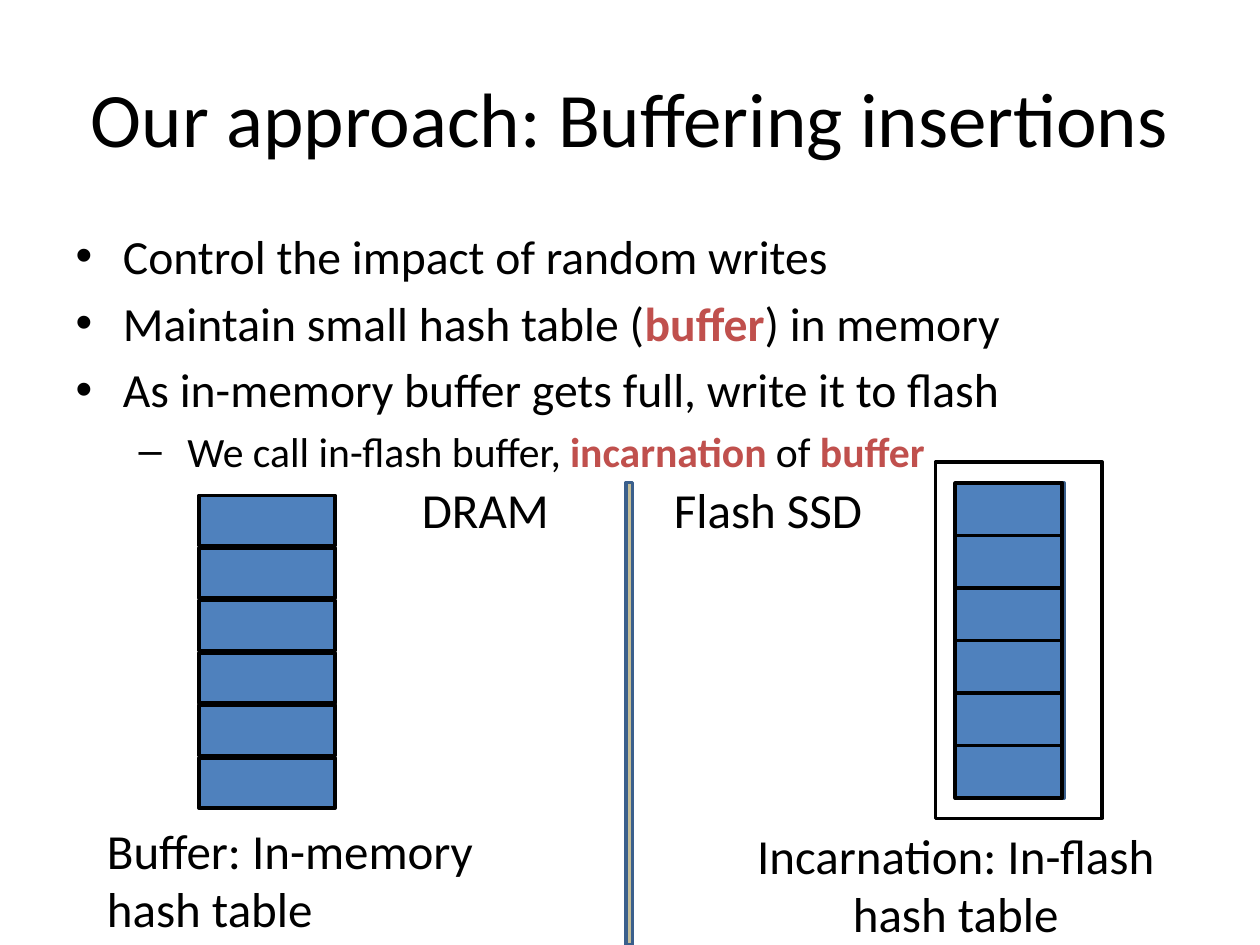
"""Build the slide on buffering hash table insertions in memory before flash."""
from pptx import Presentation
from pptx.dml.color import RGBColor
from pptx.enum import shapes, text
from pptx.util import Pt

BLACK = RGBColor(0x00, 0x00, 0x00)
RED = RGBColor(0xC0, 0x50, 0x4D)
BLUE = RGBColor(0x4F, 0x81, 0xBD)
NAVY = RGBColor(0x3A, 0x5F, 0x8C)
TAN = RGBColor(0xC4, 0xBD, 0x97)
FONT = "Calibri"


def style(run, size, color=BLACK, bold=False):
    run.font.name = FONT
    run.font.size = Pt(size)
    run.font.color.rgb = color
    run.font.bold = bold


def block(place, fill, edge, turn=270):
    rect = slide.shapes.add_shape(shapes.MSO_SHAPE.RECTANGLE, *map(Pt, place))
    rect.rotation = turn
    rect.shadow.inherit = False
    if fill is None:
        rect.fill.background()
    else:
        rect.fill.solid()
        rect.fill.fore_color.rgb = fill
    rect.line.color.rgb = edge
    rect.line.width = Pt(2)


deck = Presentation()
deck.slide_width, deck.slide_height = Pt(720), Pt(540)
slide = deck.slides.add_slide(deck.slide_layouts[1])

title = slide.shapes.title
title.left, title.top, title.width, title.height = map(Pt, (36, 21.6, 648, 90))
title.text_frame.text = "Our approach: Buffering insertions"
style(title.text_frame.paragraphs[0].runs[0], 44)

body = slide.placeholders[1]
body.left, body.top, body.width, body.height = map(Pt, (36, 126, 666, 138))
frame = body.text_frame
frame.auto_size = text.MSO_AUTO_SIZE.NONE
points = [
    (0, 27.2, [("Control the impact of random writes", False)]),
    (0, 27.2, [("Maintain small hash table (", False), ("buffer", True),
               (") in memory", False)]),
    (0, 27.2, [("As in-memory buffer gets full, write it to flash", False)]),
    (1, 23.8, [(" We call in-flash buffer, ", False), ("incarnation ", True),
               ("of", False), (" buffer", True)]),
]
for i, (level, size, parts) in enumerate(points):
    para = frame.add_paragraph() if i else frame.paragraphs[0]
    para.level = level
    for words, key in parts:
        run = para.add_run()
        run.text = words
        style(run, size, RED if key else BLACK, key)

block((480.24, 318.24, 203.76, 95.04), None, BLACK)
stacks = [
    (562.5, 260.4, 30, 61.2, RED, NAVY),
    (138.24, 258.5, 28.8, 77.76, BLUE, BLACK),
    (561.4, 260.4, 30, 61.2, BLUE, BLACK),
]
for left, top, width, height, fill, edge in stacks:
    for row in range(6):
        block((left, top + 30 * row, width, height), fill, edge)
block((357.84, 275.76, 3.6, 264.24), TAN, NAVY, 0)

labels = [
    ((408.24, 468, 275.76, 75), "Incarnation: In-flash hash table", text.PP_ALIGN.CENTER),
    ((54, 465.12, 234, 75), "Buffer: In-memory\nhash table", text.PP_ALIGN.LEFT),
    ((234, 270.72, 126, 41), "DRAM", text.PP_ALIGN.LEFT),
    ((378, 270.72, 144, 41), "Flash SSD", text.PP_ALIGN.LEFT),
]
for place, words, align in labels:
    frame = slide.shapes.add_textbox(*map(Pt, place)).text_frame
    frame.word_wrap = True
    frame.auto_size = text.MSO_AUTO_SIZE.SHAPE_TO_FIT_TEXT
    frame.text = words
    for para in frame.paragraphs:
        para.alignment = align
        style(para.runs[0], 28)

deck.save("out.pptx")
